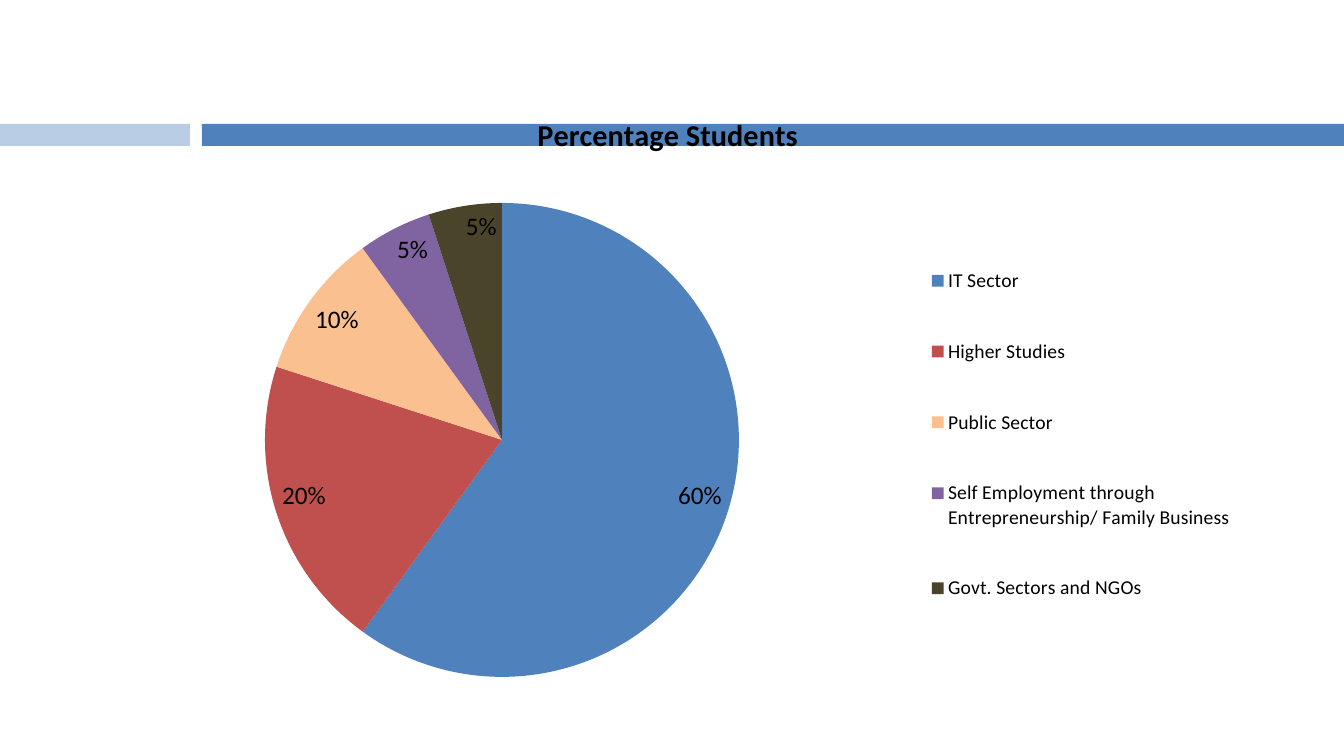
from lxml import etree
from pptx import Presentation
from pptx.chart.data import CategoryChartData
from pptx.dml.color import RGBColor
from pptx.enum.chart import XL_CHART_TYPE, XL_LABEL_POSITION, XL_LEGEND_POSITION
from pptx.enum.shapes import MSO_SHAPE
from pptx.oxml.ns import qn
from pptx.util import Pt

BLACK = RGBColor(0x00, 0x00, 0x00)
BLUE = RGBColor(0x4F, 0x81, 0xBD)
PALE_BLUE = RGBColor(0xB9, 0xCD, 0xE5)
RED = RGBColor(0xC0, 0x50, 0x4D)
PEACH = RGBColor(0xFA, 0xC0, 0x90)
PURPLE = RGBColor(0x80, 0x64, 0xA2)
OLIVE = RGBColor(0x4A, 0x45, 0x2A)

TITLE = "Percentage Students"
SECTORS = [
    ("IT Sector", 60, BLUE),
    ("Higher Studies", 20, RED),
    ("Public Sector", 10, PEACH),
    ("Self Employment through Entrepreneurship/ Family Business", 5, PURPLE),
    ("Govt. Sectors and NGOs", 5, OLIVE),
]
BARS = [((0, 124, 190, 22), PALE_BLUE), ((202, 124, 1142, 22), BLUE)]
CHART_BOX = (77, 81, 1178, 611)
PIE_BOX = (265, 203, 474, 474)
LEGEND_BOX = (916, 222, 330, 425)
TITLE_CORNER = (532, 108)
FONT = "Calibri"
SCALE = 914400 / 100.8


def emu(*lengths):
    return [round(length * SCALE) for length in lengths]


def style_font(font, size, bold=False):
    font.name = FONT
    font.size = Pt(size)
    font.bold = bold
    font.color.rgb = BLACK


def place(element, box, before, inner=False):
    for old_layout in element.findall(qn("c:layout")):
        element.remove(old_layout)
    layout = etree.Element(qn("c:layout"))
    manual = etree.SubElement(layout, qn("c:manualLayout"))
    left, top, width, height = CHART_BOX
    fractions = [(box[0] - left) / width, (box[1] - top) / height]
    fractions += [length / whole for length, whole in zip(box[2:], (width, height))]
    settings = [("layoutTarget", "inner")] if inner else []
    settings += [("xMode", "edge"), ("yMode", "edge")]
    settings += [(name, f"{value:.4f}") for name, value in zip("xywh", fractions)]
    for name, value in settings:
        etree.SubElement(manual, qn(f"c:{name}")).set("val", value)
    element.find(qn(before)).addprevious(layout)


def add_bars(slide):
    for box, color in BARS:
        bar = slide.shapes.add_shape(MSO_SHAPE.RECTANGLE, *emu(*box))
        bar.shadow.inherit = False
        bar.fill.solid()
        bar.fill.fore_color.rgb = color
        bar.line.fill.background()


def add_pie(slide):
    data = CategoryChartData()
    data.categories = [name for name, _, _ in SECTORS]
    data.add_series(TITLE, [value for _, value, _ in SECTORS])
    chart = slide.shapes.add_chart(XL_CHART_TYPE.PIE, *emu(*CHART_BOX), data).chart
    style_font(chart.font, 18)

    chart.has_title = True
    title_frame = chart.chart_title.text_frame
    title_frame.text = TITLE
    style_font(title_frame.paragraphs[0].runs[0].font, 21.6, bold=True)
    chart.chart_title.include_in_layout = False

    chart.has_legend = True
    legend = chart.legend
    legend.position = XL_LEGEND_POSITION.RIGHT
    legend.include_in_layout = False
    style_font(legend.font, 14)

    plot = chart.plots[0]
    plot.vary_by_categories = True
    plot.has_data_labels = True
    labels = plot.data_labels
    labels.show_percentage = True
    labels.show_value = False
    labels.number_format = "0%"
    labels.number_format_is_linked = False
    labels.position = XL_LABEL_POSITION.INSIDE_END
    style_font(labels.font, 18)
    for index, (_, _, color) in enumerate(SECTORS):
        fill = plot.series[0].points[index].format.fill
        fill.solid()
        fill.fore_color.rgb = color

    chart_element = chart.element.find(qn("c:chart"))
    place(chart_element.find(qn("c:title")), TITLE_CORNER, "c:overlay")
    place(chart_element.find(qn("c:plotArea")), PIE_BOX, "c:pieChart", inner=True)
    place(chart_element.find(qn("c:legend")), LEGEND_BOX, "c:overlay")


def main():
    presentation = Presentation()
    presentation.slide_width, presentation.slide_height = emu(1344, 756)
    slide = presentation.slides.add_slide(presentation.slide_layouts[6])
    add_bars(slide)
    add_pie(slide)
    presentation.save("out.pptx")


if __name__ == "__main__":
    main()
